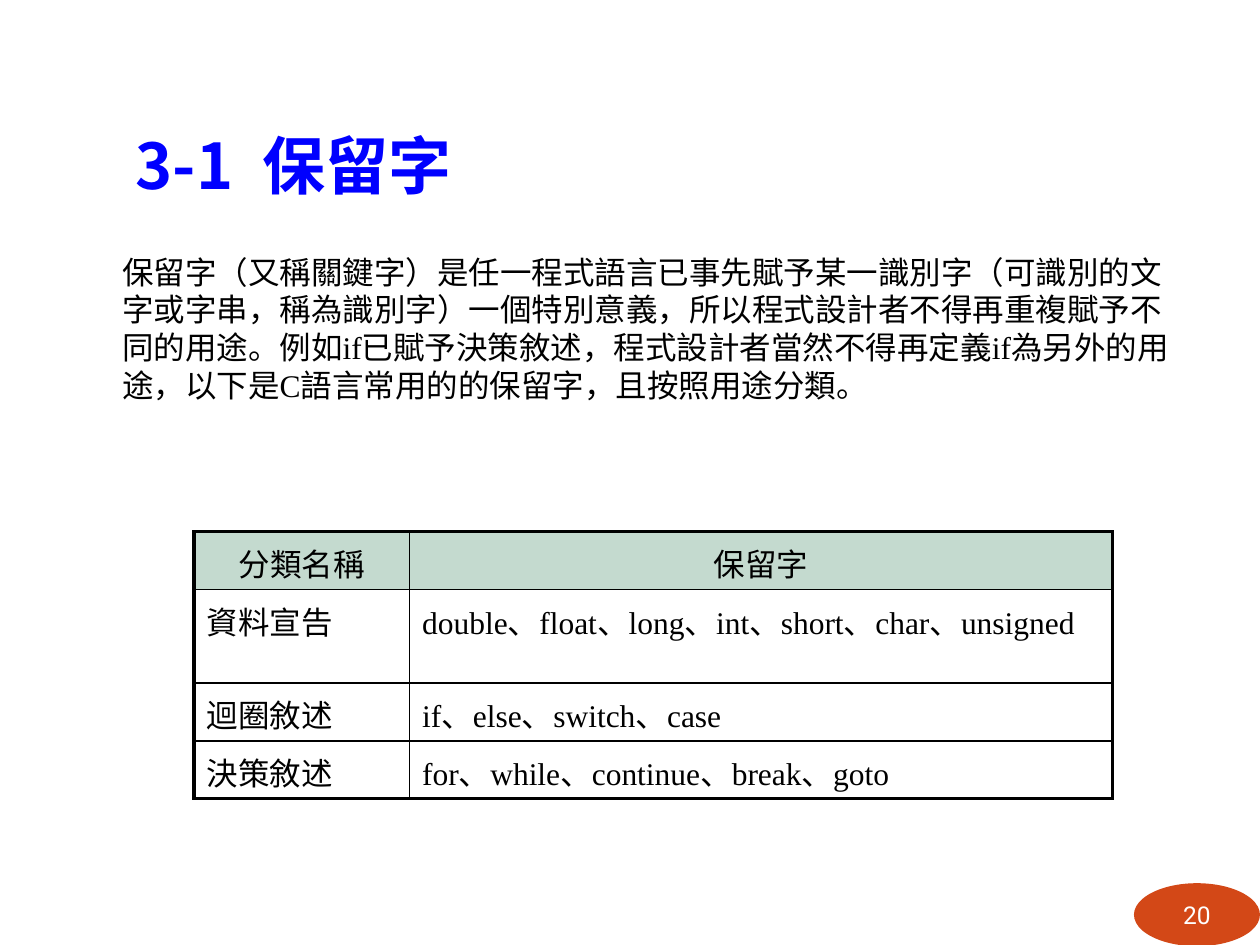
import lxml.etree
import pptx
import pptx.dml.color
import pptx.enum.shapes
import pptx.enum.text
import pptx.oxml.ns
import pptx.util

Inches = pptx.util.Inches
Pt = pptx.util.Pt
ALIGN = pptx.enum.text.PP_ALIGN
ANCHOR = pptx.enum.text.MSO_ANCHOR
qn = pptx.oxml.ns.qn

COLORS = {"title": "0000FF", "text": "000000", "header": "C4DACF",
          "border": "000000", "badge": "D34817", "number": "FFFFFF"}
CHINESE_FONT = "Noto Sans CJK TC"
TEXT_LINE = Pt(21.5)


def rgb(name):
    return pptx.dml.color.RGBColor.from_string(COLORS[name])


def write(text_frame, text, font_name, size, color, align=ALIGN.LEFT, bold=False, line=None):
    paragraph = text_frame.paragraphs[0]
    paragraph.text = text
    paragraph.alignment = align
    paragraph.line_spacing = line
    font = paragraph.font
    font.size = Pt(size)
    font.bold = bold
    font.color.rgb = rgb(color)
    font.name = font_name
    east_asian = lxml.etree.Element(qn("a:ea"), typeface=CHINESE_FONT)
    paragraph._p.pPr.find(qn("a:defRPr")).find(qn("a:latin")).addnext(east_asian)


presentation = pptx.Presentation()
presentation.slide_width = Inches(10)
presentation.slide_height = Inches(7.5)
slide = presentation.slides.add_slide(presentation.slide_layouts[6])

# Title
title = slide.shapes.add_textbox(Inches(0.98), Inches(0.91), Inches(8.5), Inches(0.79))
title.text_frame.word_wrap = True
title.text_frame.vertical_anchor = ANCHOR.BOTTOM
title.text_frame.margin_bottom = Inches(0.1)
write(title.text_frame, "3-1  保留字", CHINESE_FONT, 36, "title", bold=True)

# Explanation
body = slide.shapes.add_textbox(Inches(0.87), Inches(1.96), Inches(8.65), Inches(1.6))
body.text_frame.word_wrap = True
write(body.text_frame,
      "保留字（又稱關鍵字）是任一程式語言已事先賦予某一識別字（可識別的文字或字串，稱為識別字）"
      "一個特別意義，所以程式設計者不得再重複賦予不同的用途。例如if已賦予決策敘述，"
      "程式設計者當然不得再定義if為另外的用途，以下是C語言常用的的保留字，且按照用途分類。",
      "Times New Roman", 18, "text", line=TEXT_LINE)

# Table of reserved words
rows = [
    ("分類名稱", "保留字"),
    ("資料宣告", "double、float、long、int、short、char、unsigned"),
    ("迴圈敘述", "if、else、switch、case"),
    ("決策敘述", "for、while、continue、break、goto"),
]
row_heights = [0.46, 0.74, 0.46, 0.46]
column_widths = [1.71, 5.58]
table = slide.shapes.add_table(len(rows), 2, Inches(1.54), Inches(4.22),
                               Inches(sum(column_widths)), Inches(sum(row_heights))).table
for column, width in zip(table.columns, column_widths):
    column.width = Inches(width)
for row, height in zip(table.rows, row_heights):
    row.height = Inches(height)

for row_index, texts in enumerate(rows):
    is_header = row_index == 0
    for column_index, text in enumerate(texts):
        cell = table.cell(row_index, column_index)
        cell.margin_top = Inches(0.13)
        cell.margin_bottom = Inches(0.01)
        write(cell.text_frame, text, "Times New Roman", 18, "text",
              ALIGN.CENTER if is_header else ALIGN.LEFT, line=TEXT_LINE)
        # Thick outer frame, thin inner rules
        outer = {"lnL": column_index == 0, "lnR": column_index == 1,
                 "lnT": is_header, "lnB": row_index == len(rows) - 1}
        properties = cell._tc.get_or_add_tcPr()
        for side, is_outer in outer.items():
            line = lxml.etree.SubElement(properties, qn("a:" + side),
                                         w=str(Pt(2.25 if is_outer else 1)))
            fill = lxml.etree.SubElement(line, qn("a:solidFill"))
            lxml.etree.SubElement(fill, qn("a:srgbClr"), val=COLORS["border"])
        if is_header:
            cell.fill.solid()
            cell.fill.fore_color.rgb = rgb("header")
        else:
            cell.fill.background()

# Page number badge
badge = slide.shapes.add_shape(pptx.enum.shapes.MSO_SHAPE.OVAL,
                               Inches(9), Inches(7.01), Inches(1), Inches(0.5))
badge.shadow.inherit = False
badge.fill.solid()
badge.fill.fore_color.rgb = rgb("badge")
badge.line.fill.background()
frame = badge.text_frame
frame.word_wrap = False
frame.vertical_anchor = ANCHOR.MIDDLE
frame.margin_left = frame.margin_right = frame.margin_top = frame.margin_bottom = 0
write(frame, "20", "Roboto", 14, "number", ALIGN.CENTER)

presentation.save("out.pptx")
